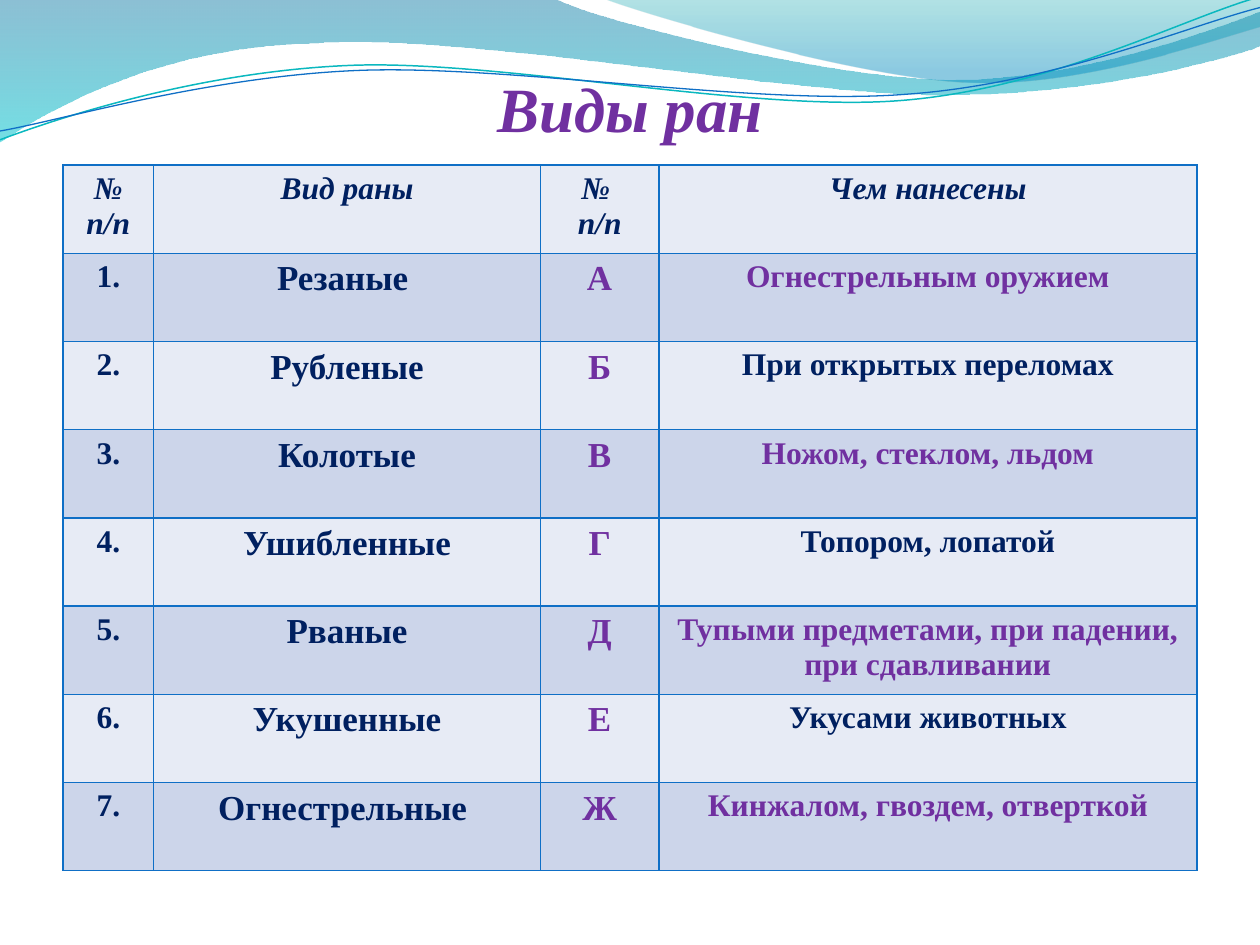
from dataclasses import dataclass

from lxml import etree
from pptx import Presentation
from pptx import util as u
from pptx.dml.color import RGBColor
from pptx.enum import text
from pptx.oxml.ns import qn


@dataclass(frozen=True)
class Theme:
    font: str = "Times New Roman"
    navy: str = "002060"
    purple: str = "7030A0"
    border: str = "0F6FC6"
    teal: str = "0AB8BF"
    bands: tuple = ("E7EBF5", "CCD5EA")
    title_size: int = 36
    name_size: int = 20
    body_size: int = 18


class SlideBuilder:
    def __init__(self, slide, theme):
        self.s = slide
        self.theme = theme

    def font(self, f, size, color, italic=False):
        f.name, f.size, f.bold, f.italic = self.theme.font, u.Pt(size), True, italic
        f.color.rgb = RGBColor.from_string(color)

    def outline(self, start, segments, close):
        """Draw (x, y) segments as lines and (x1, y1, x2, y2, x, y) as cubic curves."""
        points = [(u.Inches(seg[i]), u.Inches(seg[i + 1]))
                  for seg in segments for i in range(0, len(seg), 2)]
        builder = self.s.shapes.build_freeform(*map(u.Inches, start), scale=1.0)
        builder.add_line_segments(points, close=close)
        sp = builder.convert_to_shape()
        sp.shadow.inherit = False
        # Merge the three points of each curve into one cubic segment
        lines = iter(list(sp._element.iter(qn("a:lnTo"))))
        for seg in segments:
            first = next(lines)
            if len(seg) == 6:
                first.tag = qn("a:cubicBezTo")
                for _ in range(2):
                    extra = next(lines)
                    first.append(extra[0])
                    extra.getparent().remove(extra)
        return sp

    def wave(self, start, segments, stops):
        sp = self.outline(start, segments, close=True)
        sp.line.fill.background()
        sp.fill.gradient()
        sp.fill.gradient_angle = 270
        for stop, (pos, color, opacity) in zip(sp.fill.gradient_stops, stops):
            stop.color.rgb = RGBColor.from_string(color)
        for gs, (pos, color, opacity) in zip(sp._element.iter(qn("a:gs")), stops):
            gs.set("pos", str(pos * 1000))
            etree.SubElement(gs[0], qn("a:alpha"), val=str(opacity * 1000))

    def curve(self, start, segments, color, width):
        sp = self.outline(start, segments, close=False)
        sp.fill.background()
        sp.line.color.rgb = RGBColor.from_string(color)
        sp.line.width = u.Pt(width)

    def title(self, words, left, top, width, height):
        sp = self.s.shapes.add_textbox(*map(u.Inches, (left, top, width, height)))
        tf = sp.text_frame
        tf.word_wrap = True
        tf.vertical_anchor = text.MSO_ANCHOR.BOTTOM
        tf.margin_left = tf.margin_right = tf.margin_bottom = 0
        p = tf.paragraphs[0]
        p.text = words
        p.alignment = text.PP_ALIGN.CENTER
        self.font(p.font, self.theme.title_size, self.theme.purple, italic=True)

    def cell_borders(self, cell):
        tc_pr = cell._tc.get_or_add_tcPr()
        for i, side in enumerate(("lnL", "lnR", "lnT", "lnB")):
            ln = etree.Element(qn(f"a:{side}"), w=str(u.Pt(1)))
            fill = etree.SubElement(ln, qn("a:solidFill"))
            etree.SubElement(fill, qn("a:srgbClr"), val=self.theme.border)
            tc_pr.insert(i, ln)

    def cell_style(self, row, col):
        t = self.theme
        if row == 0:
            return t.body_size, t.navy, True
        size = t.name_size if col in (1, 2) else t.body_size
        purple = col == 2 or (col == 3 and row % 2)
        return size, t.purple if purple else t.navy, False

    def table(self, rows, left, top, widths, heights):
        box = (left, top, sum(widths), sum(heights))
        frame = self.s.shapes.add_table(len(rows), len(widths), *map(u.Inches, box))
        tbl = frame.table
        tbl.first_row = tbl.horz_banding = False
        for column, width in zip(tbl.columns, widths):
            column.width = u.Inches(width)
        for i, (values, height) in enumerate(zip(rows, heights)):
            tbl.rows[i].height = u.Inches(height)
            for j, value in enumerate(values):
                cell = tbl.cell(i, j)
                cell.text = value
                cell.fill.solid()
                cell.fill.fore_color.rgb = RGBColor.from_string(self.theme.bands[i % 2])
                self.cell_borders(cell)
                # Run fonts keep the row height true to the text size
                for p in cell.text_frame.paragraphs:
                    p.alignment = text.PP_ALIGN.CENTER
                    for r in p.runs:
                        self.font(r.font, *self.cell_style(i, j))


ROWS = [
    ("№\nп/п", "Вид раны", "№ \nп/п", "Чем нанесены"),
    ("1.", "Резаные ", "А", "Огнестрельным оружием"),
    ("2.", "Рубленые", "Б", "При открытых переломах"),
    ("3.", "Колотые", "В", "Ножом, стеклом, льдом"),
    ("4.", "Ушибленные", "Г", "Топором, лопатой"),
    ("5.", "Рваные", "Д", "Тупыми предметами, при падении, при сдавливании"),
    ("6.", "Укушенные", "Е", "Укусами животных"),
    ("7.", "Огнестрельные ", "Ж", "Кинжалом, гвоздем, отверткой"),
]


def main():
    prs = Presentation()
    prs.slide_width, prs.slide_height = u.Inches(10), u.Inches(7.5)
    theme = Theme()
    b = SlideBuilder(prs.slides.add_slide(prs.slide_layouts[6]), theme)

    # Translucent waves along the top edge
    b.wave((0, 0), [(4.4, -0.01),
                    (4.76, 0.17, 6.64, 0.63, 7.58, 0.63),
                    (8.53, 0.63, 9.58, 0.26, 10, 0.09),
                    (10.01, 0.36),
                    (9.83, 0.44, 8.7, 0.76, 7.46, 0.75),
                    (6.22, 0.75, 3.82, 0.28, 2.57, 0.34),
                    (1.29, 0.36, 0.46, 0.83, -0.01, 1.13),
                    (0, 0)],
           [(0, "0074A1", 45), (100, "00C6CF", 55)])
    b.wave((4.79, -0.01), [(5.09, 0.11, 6.82, 0.62, 7.69, 0.65),
                           (8.56, 0.69, 9.61, 0.32, 10, 0.21),
                           (10, 0),
                           (4.79, -0.01)],
           [(0, "00A1A9", 30), (80, "008BBF", 45)])

    # Thin curves over the waves
    b.curve((0, 1.11), [(0.48, 0.93, 1.58, 0.57, 2.77, 0.52),
                        (3.95, 0.47, 5.93, 0.89, 7.13, 0.8),
                        (8.33, 0.71, 9.38, 0.15, 9.98, -0.02)], theme.teal, 0.85)
    b.curve((0, 1.04), [(0.47, 0.96, 1.64, 0.61, 2.83, 0.56),
                        (4.03, 0.51, 5.97, 0.84, 7.17, 0.75),
                        (8.36, 0.67, 9.41, 0.21, 10, 0.06)], theme.border, 0.75)

    # Title and table of wounds
    b.title("Виды ран", 0.5, 0.36, 9, 0.79)
    b.table(ROWS, 0.5, 1.31, (0.72, 3.07, 0.94, 4.27), [0.47] + [0.7] * 7)

    prs.save("out.pptx")


if __name__ == "__main__":
    main()
